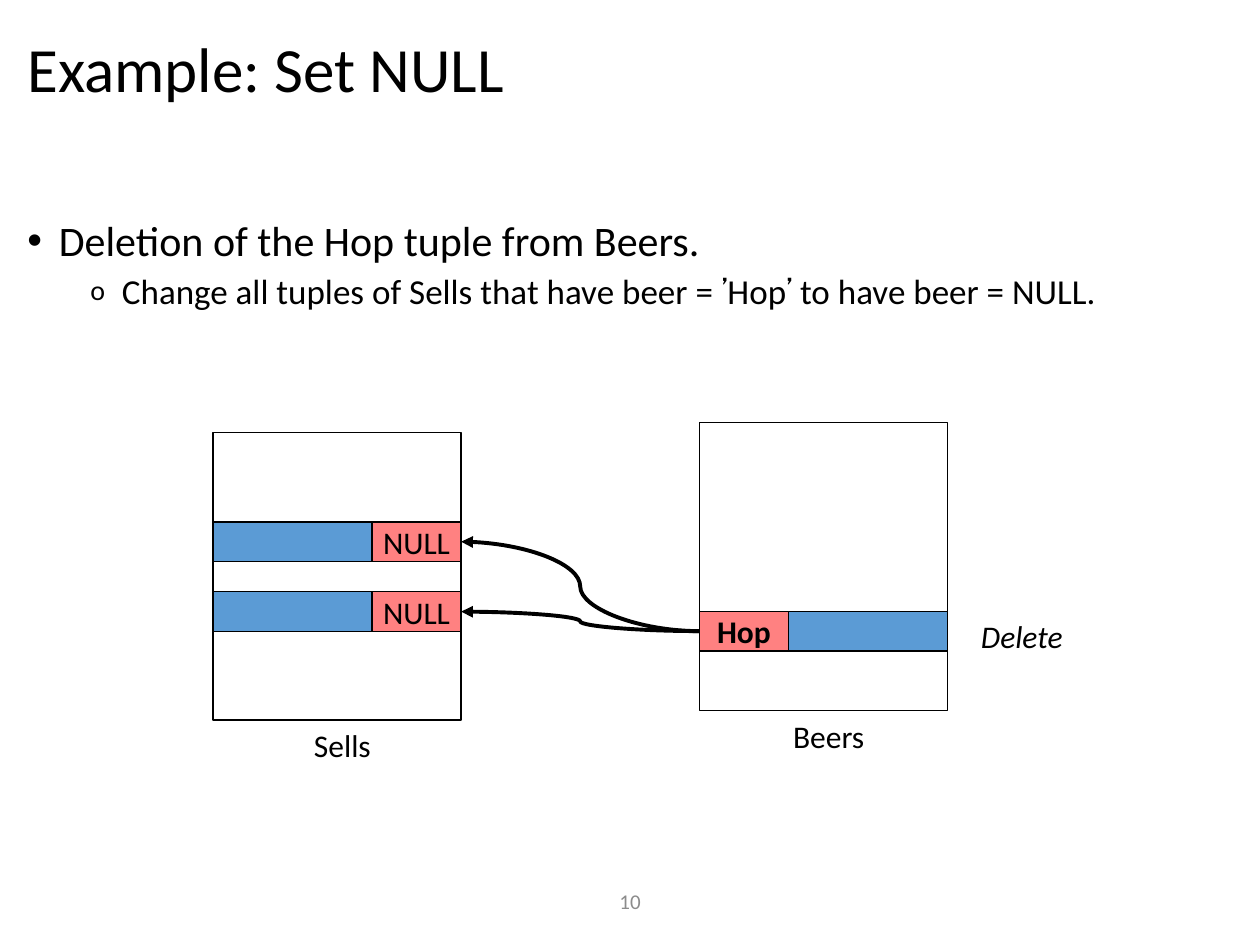
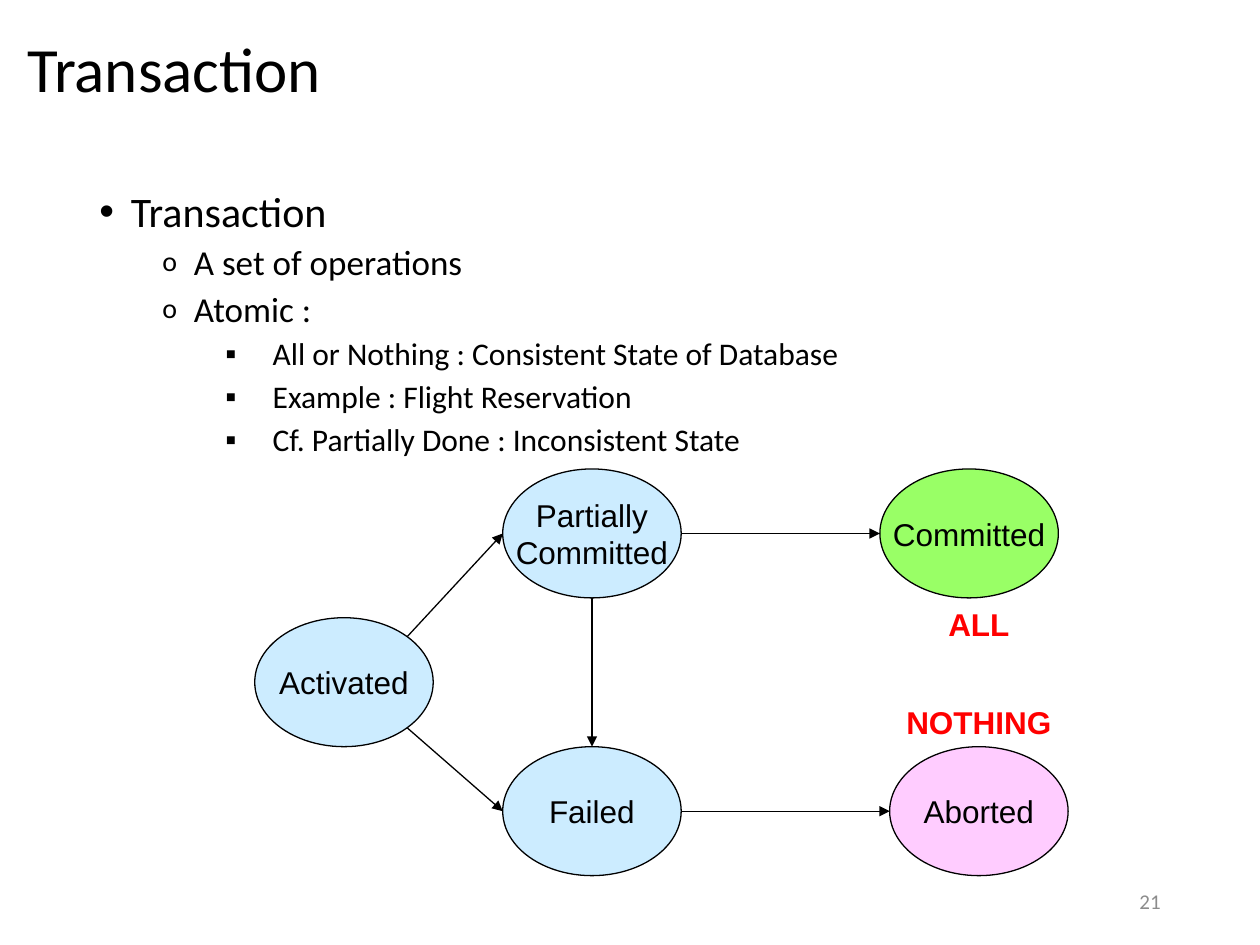
from dataclasses import dataclass

from lxml import etree
from pptx import Presentation
from pptx.dml.color import RGBColor
from pptx.enum.shapes import MSO_CONNECTOR, MSO_SHAPE
from pptx.enum.text import MSO_ANCHOR, PP_ALIGN
from pptx.oxml.ns import qn
from pptx.util import Pt

RECT, OVAL = MSO_SHAPE.RECTANGLE, MSO_SHAPE.OVAL
STRAIGHT, CURVE = MSO_CONNECTOR.STRAIGHT, MSO_CONNECTOR.CURVE
TOP, MIDDLE = MSO_ANCHOR.TOP, MSO_ANCHOR.MIDDLE
LEFT, CENTER, RIGHT = PP_ALIGN.LEFT, PP_ALIGN.CENTER, PP_ALIGN.RIGHT
SIDE_LEFT, SIDE_RIGHT = 1, 3


@dataclass(frozen=True)
class Theme:
    font: str = "Calibri"
    quote_font: str = "Cabin"
    state_font: str = "Arial"
    ink: str = "000000"
    number: str = "8C8C8C"
    row: str = "5B9BD5"
    key: str = "FF8181"
    state: str = "CCECFF"
    good: str = "99FF66"
    bad: str = "FFCCFF"
    alert: str = "FF0000"
    title_size: float = 36
    body_sizes: tuple = (24, 20, 18)
    label_size: float = 18
    number_size: float = 12
    thin: float = 0.75
    thick: float = 2.25


T = Theme()

# Content: bullets are (level, text); a list of text holds (words, font) runs
NULL_BULLETS = [
    (0, "Deletion of the Hop tuple from Beers."),
    (1, [("Change all tuples of Sells that have beer = ", T.font),
         ("’", T.quote_font), ("Hop", T.font), ("’", T.quote_font),
         (" to have beer = NULL.", T.font)]),
]
TRANSACTION_BULLETS = [
    (0, "Transaction"),
    (1, "A set of operations"),
    (1, "Atomic :"),
    (2, "All or Nothing : Consistent State of Database"),
    (2, "Example : Flight Reservation"),
    (2, "Cf. Partially Done : Inconsistent State"),
]
# Relations: name, left, top, key text, key on the right, row tops
RELATIONS = [
    ("Sells", 121.7, 247, "NULL", True, (298.2, 338.2)),
    ("Beers", 399.6, 241.6, "Hop", False, (349.3,)),
]
# States: name -> (left, top, fill)
STATES = {
    "Activated": (145.6, 353, T.state),
    "Partially\nCommitted": (287.3, 268, T.state),
    "Failed": (287.3, 426.7, T.state),
    "Aborted": (508.4, 426.7, T.bad),
    "Committed": (502.8, 268, T.good),
}
# Transitions: state, direction it leaves by, state, direction it enters by
DIAG = 0.71
TRANSITIONS = [
    ("Activated", (DIAG, -DIAG), "Partially\nCommitted", (-1, 0)),
    ("Partially\nCommitted", (1, 0), "Committed", (-1, 0)),
    ("Partially\nCommitted", (0, 1), "Failed", (0, -1)),
    ("Failed", (1, 0), "Aborted", (-1, 0)),
    ("Activated", (DIAG, DIAG), "Failed", (-1, 0)),
]
OUTCOMES = [("ALL", 342), ("NOTHING", 398.4)]

# Sizes: relation, row, key cell, state, label height
REL_W, REL_H, ROW_H, KEY_W = 141.8, 164.4, 22.7, 51
STATE_W, STATE_H = 102, 73.7
LABEL_W, LABEL_H = 102, 28.8
# Bullet levels: left margin, hanging, space before, character, size
LEVELS = [(18, 18, 10, "•", 100), (54, 18, 5, "o", 80), (99, 27, 5, "▪", 100)]


def write(tf, text, new=False, font=T.font, size=T.label_size, color=T.ink,
          bold=False, italic=False, align=LEFT, anchor=TOP, wrap=True,
          spacing=None):
    """Write one paragraph of text, or of (words, font) runs."""
    tf.word_wrap, tf.vertical_anchor = wrap, anchor
    p = tf.add_paragraph() if new else tf.paragraphs[0]
    p.alignment, p.line_spacing = align, spacing
    for words, face in [(text, font)] if isinstance(text, str) else text:
        for i, line in enumerate(words.split("\n")):
            if i:
                p.add_line_break()
            r = p.add_run()
            r.text = line
            r.font.name, r.font.size = face, Pt(size)
            r.font.bold, r.font.italic = bold, italic
            r.font.color.rgb = RGBColor.from_string(color)
    return p


def add_text(s, box, text, **fmt):
    tb = s.shapes.add_textbox(*map(Pt, box))
    write(tb.text_frame, text, **fmt)


def add_bullets(s, box, bullets):
    tf = s.shapes.add_textbox(*map(Pt, box)).text_frame
    for i, (level, text) in enumerate(bullets):
        margin, hang, before, char, percent = LEVELS[level]
        p = write(tf, text, new=i > 0, size=T.body_sizes[level], spacing=0.9)
        p.level, p.space_before = level, Pt(before)
        pPr = p._p.get_or_add_pPr()
        pPr.set("marL", str(Pt(margin)))
        pPr.set("indent", str(-Pt(hang)))
        face = T.font if char == "o" else T.state_font
        for tag, key, value in (("a:buSzPct", "val", str(percent * 1000)),
                                ("a:buFont", "typeface", face),
                                ("a:buChar", "char", char)):
            etree.SubElement(pPr, qn(tag)).set(key, value)


def add_box(s, kind, box, fill=None, text=None, **fmt):
    sp = s.shapes.add_shape(kind, *map(Pt, box))
    sp.shadow.inherit = False
    if fill:
        sp.fill.solid()
        sp.fill.fore_color.rgb = RGBColor.from_string(fill)
    else:
        sp.fill.background()
    sp.line.color.rgb = RGBColor.from_string(T.ink)
    sp.line.width = Pt(T.thin)
    if text:
        write(sp.text_frame, text, align=CENTER, anchor=MIDDLE, wrap=False, **fmt)
    return sp


def add_arrow(s, kind, start, end, width, tip):
    c = s.shapes.add_connector(kind, *map(Pt, (*start, *end)))
    c.line.color.rgb = RGBColor.from_string(T.ink)
    c.line.width = Pt(width)
    etree.SubElement(c.line._get_or_add_ln(), qn(tip)).set("type", "triangle")
    etree.SubElement(c._element.spPr, qn("a:effectLst"))
    return c


def add_slide(prs, title, number, number_box, number_align):
    s = prs.slides.add_slide(prs.slide_layouts[6])
    add_text(s, (8.6, 5.8, 702.7, 71.3), title, size=T.title_size,
             anchor=MIDDLE, spacing=0.9)
    add_text(s, number_box, number, size=T.number_size, color=T.number,
             align=number_align, anchor=MIDDLE)
    return s


def set_null_slide(prs):
    s = add_slide(prs, "Example: Set NULL", "10",
                  (238.3, 500.4, 243.4, LABEL_H), CENTER)
    add_bullets(s, (8.6, 122.4, 697.7, 362.9), NULL_BULLETS)

    # Relations with their rows and key cells
    keys = {}
    for name, left, top, key, key_right, rows in RELATIONS:
        add_box(s, RECT, (left, top, REL_W, REL_H))
        key_left = left + (REL_W - KEY_W if key_right else 0)
        keys[name] = []
        for y in rows:
            add_box(s, RECT, (left, y, REL_W, ROW_H), T.row)
            keys[name].append(add_box(s, RECT, (key_left, y, KEY_W, ROW_H), T.key,
                                      key, bold=not key_right))
        add_text(s, (left + 23, top + REL_H, LABEL_W, LABEL_H), name, align=CENTER)
    add_text(s, (547.2, 349.2, 73.4, LABEL_H), "Delete", italic=True, align=CENTER)

    # References from the deleted key
    for cell in keys["Sells"]:
        c = add_arrow(s, CURVE, (0, 0), (1, 1), T.thick, "a:headEnd")
        c.begin_connect(cell, SIDE_RIGHT)
        c.end_connect(keys["Beers"][0], SIDE_LEFT)


def state_point(name, direction):
    left, top, _ = STATES[name]
    dx, dy = direction
    return left + STATE_W / 2 * (1 + dx), top + STATE_H / 2 * (1 + dy)


def transaction_slide(prs):
    s = add_slide(prs, "Transaction", "21", (508.3, 500.4, 162, LABEL_H), RIGHT)
    add_bullets(s, (49.7, 105.8, 620.6, 380.9), TRANSACTION_BULLETS)

    # State diagram
    for name, (left, top, fill) in STATES.items():
        add_box(s, OVAL, (left, top, STATE_W, STATE_H), fill, name,
                font=T.state_font)
    for source, leave, target, enter in TRANSITIONS:
        add_arrow(s, STRAIGHT, state_point(source, leave),
                  state_point(target, enter), T.thin, "a:tailEnd")
    for text, top in OUTCOMES:
        add_text(s, (508.4, top, LABEL_W, LABEL_H), text, font=T.state_font,
                 color=T.alert, bold=True, align=CENTER)


def main():
    prs = Presentation()
    prs.slide_width, prs.slide_height = Pt(720), Pt(540)
    set_null_slide(prs)
    transaction_slide(prs)
    prs.save("out.pptx")


if __name__ == "__main__":
    main()
